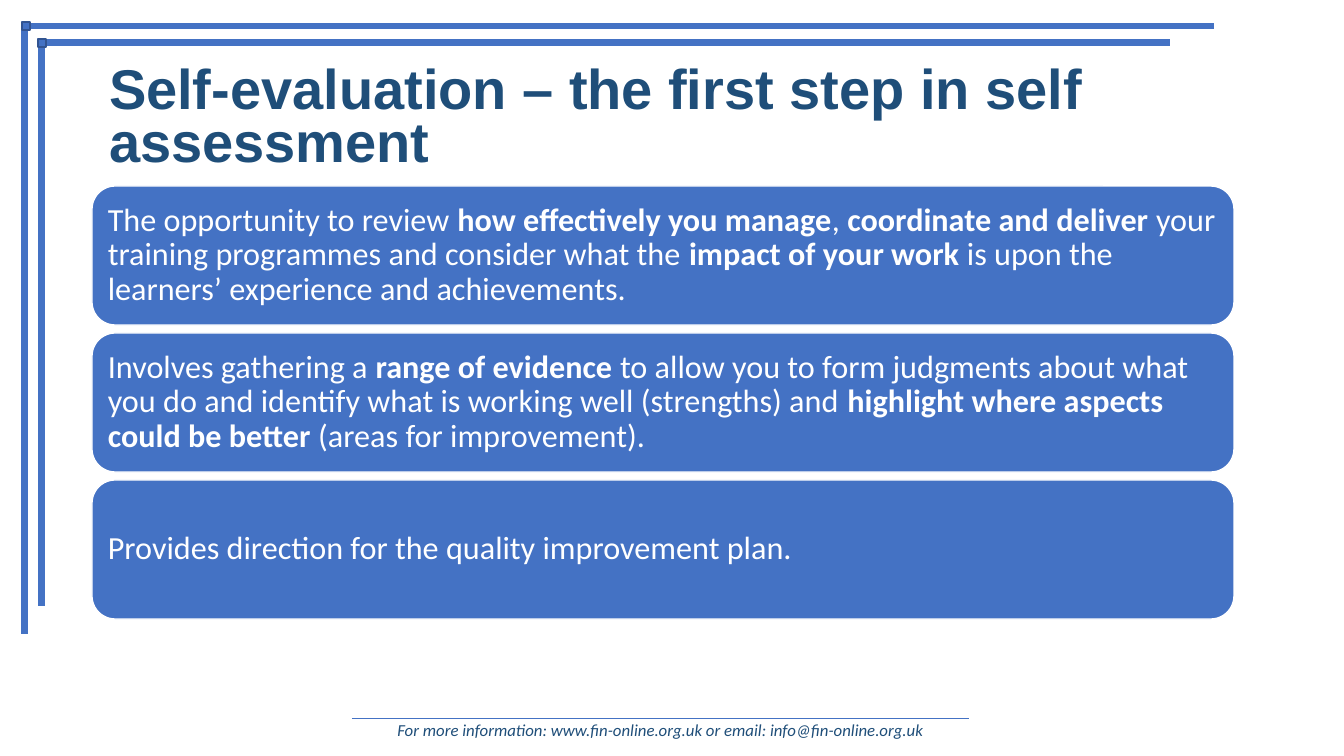
from lxml import etree
from pptx import Presentation
from pptx.dml.color import RGBColor
from pptx.enum.shapes import MSO_CONNECTOR, MSO_SHAPE
from pptx.enum.text import MSO_ANCHOR, PP_ALIGN
from pptx.oxml.ns import qn
from pptx.util import Pt

PX = 914400 / 100.8
STRAIGHT = MSO_CONNECTOR.STRAIGHT
RECT, ROUNDED = MSO_SHAPE.RECTANGLE, MSO_SHAPE.ROUNDED_RECTANGLE
MIDDLE = MSO_ANCHOR.MIDDLE
LEFT, CENTER = PP_ALIGN.LEFT, PP_ALIGN.CENTER
COLORS = {"blue": "4472C4", "edge": "325491", "navy": "1F4E79", "white": "FFFFFF"}


def px(*values):
    return [round(v * PX) for v in values]


def write(sp, runs, size, color, font="Calibri", italic=False, align=LEFT,
          spacing=0.9, inset=(10, 5)):
    """Fill a shape with one paragraph of (text, bold) runs."""
    tf = sp.text_frame
    tf.word_wrap = True
    tf.vertical_anchor = MIDDLE
    tf.margin_left = tf.margin_right = px(inset[0])[0]
    tf.margin_top = tf.margin_bottom = px(inset[1])[0]
    p = tf.paragraphs[0]
    p.alignment = align
    p.line_spacing = spacing
    for text, bold in runs:
        r = p.add_run()
        r.text = text
        r.font.name = font
        r.font.size = Pt(size)
        r.font.bold = bold
        r.font.italic = italic
        r.font.color.rgb = RGBColor.from_string(COLORS[color])


prs = Presentation()
prs.slide_width, prs.slide_height = px(1344, 756)
shapes = prs.slides.add_slide(prs.slide_layouts[6]).shapes

# Frame lines and footer rule: x1, y1, x2, y2, width
for x1, y1, x2, y2, width in [
    (26, 26, 1214, 26, 5),
    (42, 39, 42, 606, 5),
    (25, 22, 25, 634, 5),
    (352, 718, 969, 718, 0.5),
    (43, 43, 1170, 43, 5),
]:
    line = shapes.add_connector(STRAIGHT, *px(x1, y1, x2, y2))
    line.line.color.rgb = RGBColor.from_string(COLORS["blue"])
    line.line.width = Pt(width)
    etree.SubElement(line._element.spPr, qn("a:effectLst"))

# Corner squares and cards: preset, box, outline colour, runs
CARD_TOP, CARD_STEP = 186, 147
cards = [
    [("The opportunity to review ", False),
     ("how effectively you manage", True),
     (", ", False),
     ("coordinate and deliver ", True),
     ("your training programmes and consider what the ", False),
     ("impact of your work ", True),
     ("is upon the learners’ experience and achievements.", False)],
    [("Involves gathering a ", False),
     ("range of evidence ", True),
     ("to allow you to form judgments about what you do and identify "
      "what is working well (strengths) and ", False),
     ("highlight where aspects could be better ", True),
     ("(areas for improvement).", False)],
    [("Provides direction for the quality improvement plan.", False)],
]
boxes = [(RECT, (22, 22, 8, 8), "edge", []), (RECT, (38, 39, 8, 8), "edge", [])]
for i, runs in enumerate(cards):
    boxes.append((ROUNDED, (92, CARD_TOP + i * CARD_STEP, 1142, 139), "white", runs))

for preset, box, edge, runs in boxes:
    sp = shapes.add_shape(preset, *px(*box))
    sp.shadow.inherit = False
    sp.fill.solid()
    sp.fill.fore_color.rgb = RGBColor.from_string(COLORS["blue"])
    sp.line.color.rgb = RGBColor.from_string(COLORS[edge])
    sp.line.width = Pt(1)
    if runs:
        write(sp, runs, 23, "white", inset=(9, 9))

# Title
title = shapes.add_textbox(*px(99, 59, 1122, 122))
write(title, [("Self-evaluation – the first step in self assessment", True)],
      40, "navy", font="Arial", spacing=0.8)

# Footer
footer = shapes.add_textbox(*px(243, 711, 835, 40))
write(footer,
      [("For more information: www.fin-online.org.uk or email: info@fin-online.org.uk", False)],
      12, "navy", italic=True, align=CENTER)

prs.save("out.pptx")
